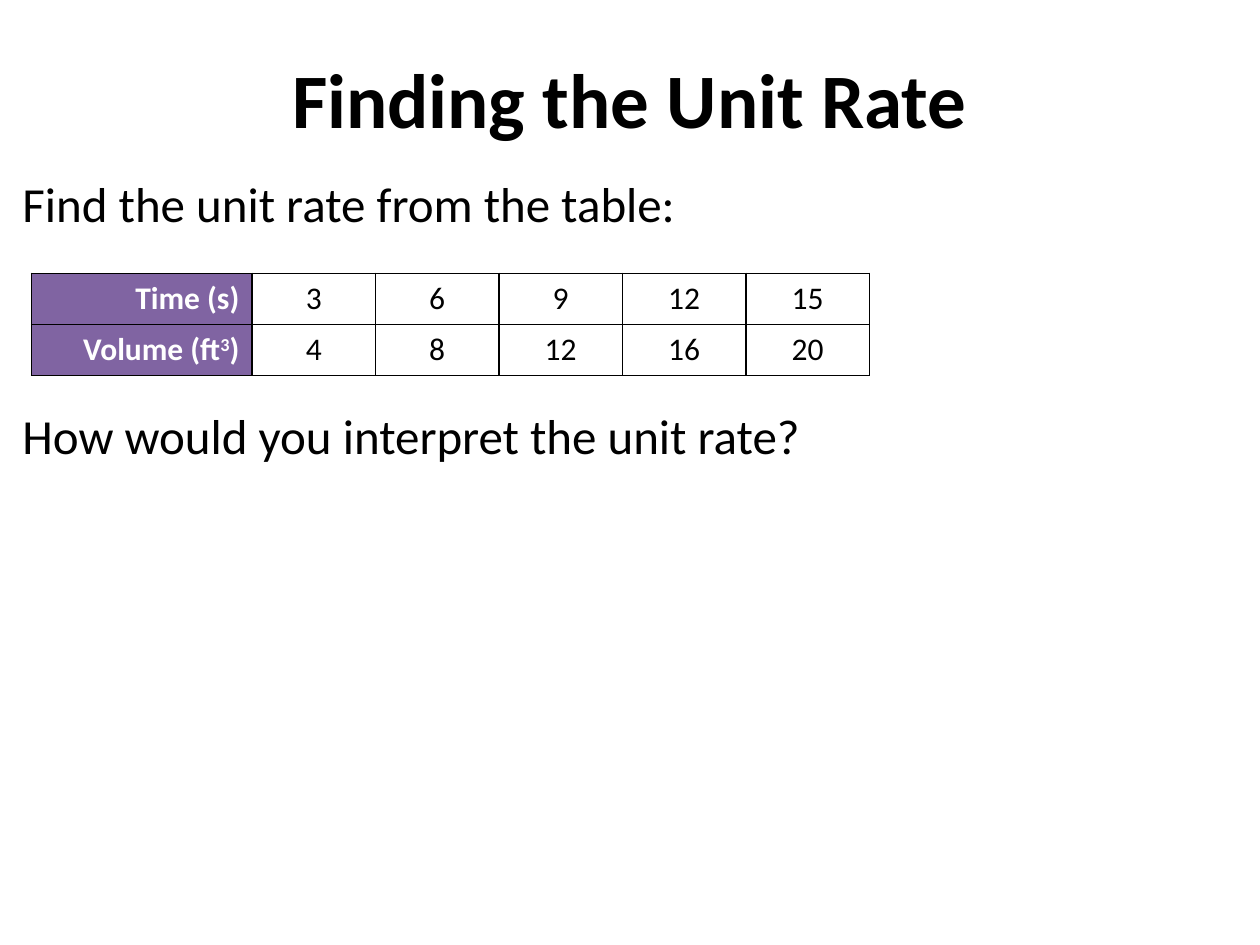
from dataclasses import dataclass

from lxml import etree
from pptx import Presentation
from pptx.dml.color import RGBColor
from pptx.enum.text import MSO_ANCHOR, PP_ALIGN
from pptx.oxml.ns import qn
from pptx.util import Inches, Pt

LEFT, CENTER, RIGHT = PP_ALIGN.LEFT, PP_ALIGN.CENTER, PP_ALIGN.RIGHT
JUSTIFY = PP_ALIGN.JUSTIFY
MIDDLE = MSO_ANCHOR.MIDDLE
TITLE_ONLY = 5


@dataclass(frozen=True)
class Theme:
    font: str = "Calibri"
    title: int = 44
    body: int = 28
    cell: int = 18
    ink: str = "000000"
    paper: str = "FFFFFF"
    head: str = "8064A2"


THEME = Theme()

# Each label is split into runs; odd runs are superscript.
RATES = [
    (["Time (s)"], [3, 6, 9, 12, 15]),
    (["Volume (ft", "3", ")"], [4, 8, 12, 16, 20]),
]


def style(para, size, color=THEME.ink, bold=False, align=LEFT):
    para.alignment = align
    for run in para.runs:
        font = run.font
        font.name, font.size, font.bold = THEME.font, Pt(size), bold
        font.color.rgb = RGBColor.from_string(color)


def place(shape, left, top, width, height):
    shape.left, shape.top = Inches(left), Inches(top)
    shape.width, shape.height = Inches(width), Inches(height)


def add_title(slide, text):
    title = slide.shapes.title
    place(title, 0.5, 0.3, 9, 0.95)
    title.text_frame.text = text
    style(title.text_frame.paragraphs[0], THEME.title, bold=True, align=CENTER)


def add_line(slide, text, top, align=LEFT):
    box = slide.shapes.add_textbox(
        Inches(0.08), Inches(top), Inches(9.42), Inches(0.57))
    frame = box.text_frame
    frame.word_wrap = True
    frame.text = text
    style(frame.paragraphs[0], THEME.body, align=align)


def add_borders(cell):
    """Draw a thin line on all four sides; lines must precede the fill."""
    props = cell._tc.get_or_add_tcPr()
    for place_no, side in enumerate(("lnL", "lnR", "lnT", "lnB")):
        line = etree.Element(qn(f"a:{side}"), w=str(Pt(1)))
        fill = etree.SubElement(line, qn("a:solidFill"))
        etree.SubElement(fill, qn("a:srgbClr"), val=THEME.ink)
        props.insert(place_no, line)


def fill_label(cell, parts):
    cell.fill.solid()
    cell.fill.fore_color.rgb = RGBColor.from_string(THEME.head)
    para = cell.text_frame.paragraphs[0]
    for i, part in enumerate(parts):
        run = para.add_run()
        run.text = part
        if i % 2:
            run._r.get_or_add_rPr().set("baseline", "30000")
    style(para, THEME.cell, THEME.paper, bold=True, align=RIGHT)


def fill_value(cell, value):
    cell.fill.background()
    cell.text_frame.text = str(value)
    style(cell.text_frame.paragraphs[0], THEME.cell, align=CENTER)


def add_rates(slide, rates):
    count = len(rates[0][1]) + 1
    table = slide.shapes.add_table(
        len(rates), count, Inches(0.25), Inches(2.17),
        Inches(6.67), Inches(0.81)).table
    table.first_row = table.horz_banding = False
    for i, col in enumerate(table.columns):
        col.width = Inches(0.98 if i else 1.75)
    for r, (label, values) in enumerate(rates):
        fill_label(table.cell(r, 0), label)
        for c, value in enumerate(values, 1):
            fill_value(table.cell(r, c), value)
    for cell in table.iter_cells():
        cell.vertical_anchor = MIDDLE
        add_borders(cell)


def main():
    deck = Presentation()
    deck.slide_width, deck.slide_height = Inches(10), Inches(7.5)
    slide = deck.slides.add_slide(deck.slide_layouts[TITLE_ONLY])
    add_title(slide, "Finding the Unit Rate")
    add_line(slide, "Find the unit rate from the table:", 1.33)
    add_rates(slide, RATES)
    add_line(slide, "How would you interpret the unit rate?", 3.17, JUSTIFY)
    deck.save("out.pptx")


if __name__ == "__main__":
    main()
